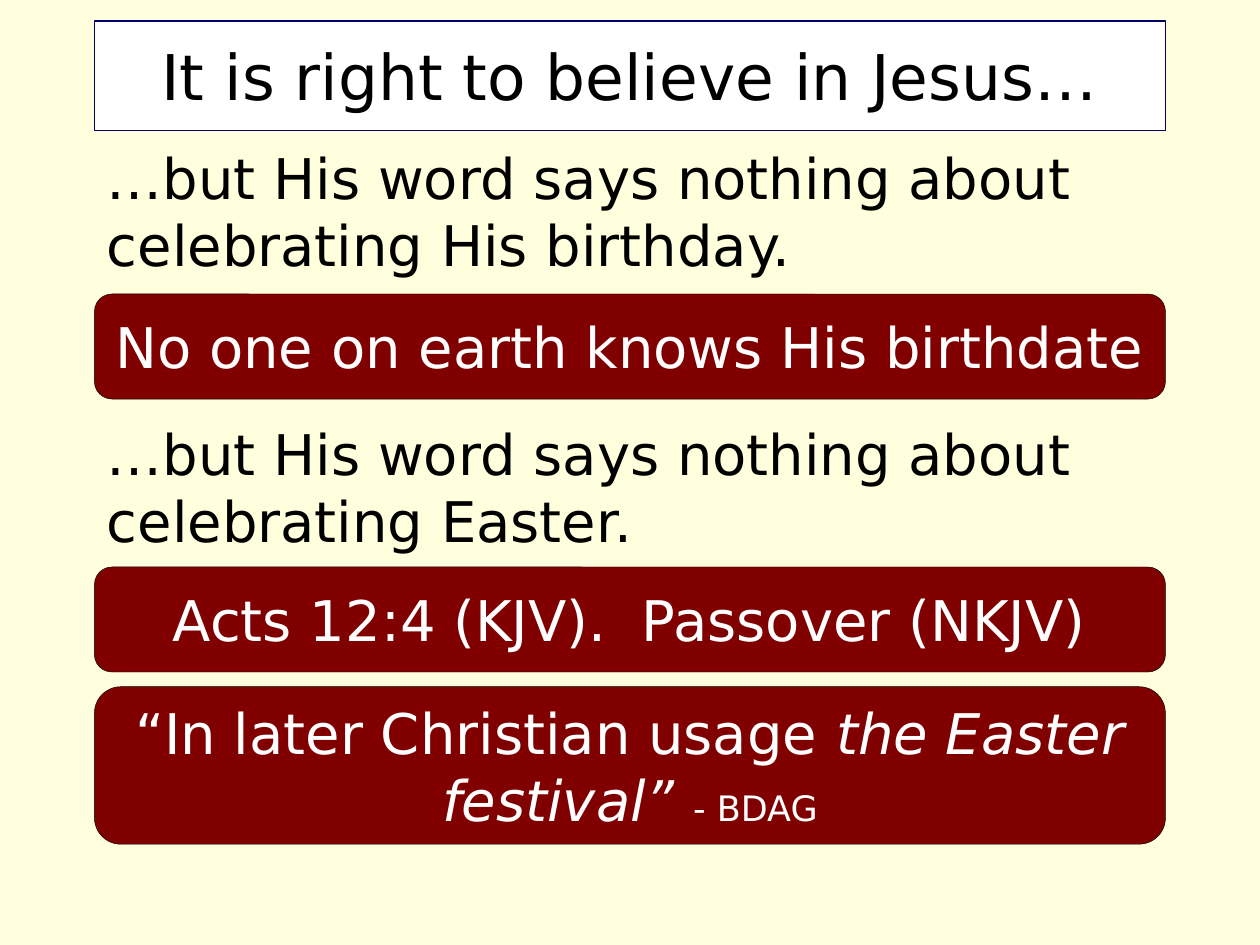
from pptx import Presentation
from pptx.dml.color import RGBColor
from pptx.enum.shapes import MSO_SHAPE
from pptx.enum.text import MSO_ANCHOR, PP_ALIGN
from pptx.util import Pt

RECTANGLE = MSO_SHAPE.RECTANGLE
ROUNDED = MSO_SHAPE.ROUNDED_RECTANGLE
MIDDLE = MSO_ANCHOR.MIDDLE
CENTER = PP_ALIGN.CENTER

CREAM = RGBColor(0xFF, 0xFF, 0xDD)
WHITE = RGBColor(0xFF, 0xFF, 0xFF)
BLACK = RGBColor(0x00, 0x00, 0x00)
NAVY = RGBColor(0x00, 0x00, 0x66)
MAROON = RGBColor(0x80, 0x00, 0x00)

FONT = "DejaVu Sans"
LEFT, WIDTH = 54, 612
BODY_SIZE = 32


def style_run(run, size, color, italic=False):
    run.font.name = FONT
    run.font.size = Pt(size)
    run.font.color.rgb = color
    if italic:
        run.font.italic = True


def add_panel(page, kind, top, height, fill, line, line_width, color, parts):
    """Filled panel with one centred paragraph; parts are (text, size, italic)."""
    panel = page.shapes.add_shape(kind, Pt(LEFT), Pt(top), Pt(WIDTH), Pt(height))
    panel.shadow.inherit = False
    panel.fill.solid()
    panel.fill.fore_color.rgb = fill
    panel.line.color.rgb = line
    panel.line.width = Pt(line_width)
    frame = panel.text_frame
    frame.word_wrap = True
    frame.vertical_anchor = MIDDLE
    para = frame.paragraphs[0]
    para.alignment = CENTER
    for text, size, italic in parts:
        run = para.add_run()
        run.text = text
        style_run(run, size, color, italic)


def add_title(page, text):
    add_panel(page, RECTANGLE, 12, 62.5, WHITE, NAVY, 0.75, BLACK,
              [(text, 36, False)])


def add_callout(page, top, height, parts):
    add_panel(page, ROUNDED, top, height, MAROON, BLACK, 0.25, WHITE, parts)


def add_body(page, top, height, lines, gap):
    """Text box whose paragraphs leave room for the callouts between them."""
    box = page.shapes.add_textbox(Pt(LEFT), Pt(top), Pt(WIDTH), Pt(height))
    frame = box.text_frame
    frame.word_wrap = True
    frame.text = "\n".join(lines)
    for index, para in enumerate(frame.paragraphs):
        if index:
            para.space_before = Pt(gap)
        style_run(para.runs[0], BODY_SIZE, BLACK)


def main():
    deck = Presentation()
    deck.slide_width, deck.slide_height = Pt(720), Pt(540)
    page = deck.slides.add_slide(deck.slide_layouts[6])
    page.background.fill.solid()
    page.background.fill.fore_color.rgb = CREAM

    # Title and the two statements
    add_title(page, "It is right to believe in Jesus…")
    add_body(page, 78.5, 432, [
        "…but His word says nothing about celebrating His birthday.",
        "…but His word says nothing about celebrating Easter.",
    ], gap=81)

    # Callouts
    add_callout(page, 168, 60,
                [("No one on earth knows His birthdate", BODY_SIZE, False)])
    add_callout(page, 324, 60,
                [("Acts 12:4 (KJV).  Passover (NKJV)", BODY_SIZE, False)])
    add_callout(page, 392.4, 90, [
        ("“In later Christian usage ", BODY_SIZE, False),
        ("the Easter festival” ", BODY_SIZE, True),
        ("- BDAG", 20, False),
    ])

    deck.save("out.pptx")


if __name__ == "__main__":
    main()
